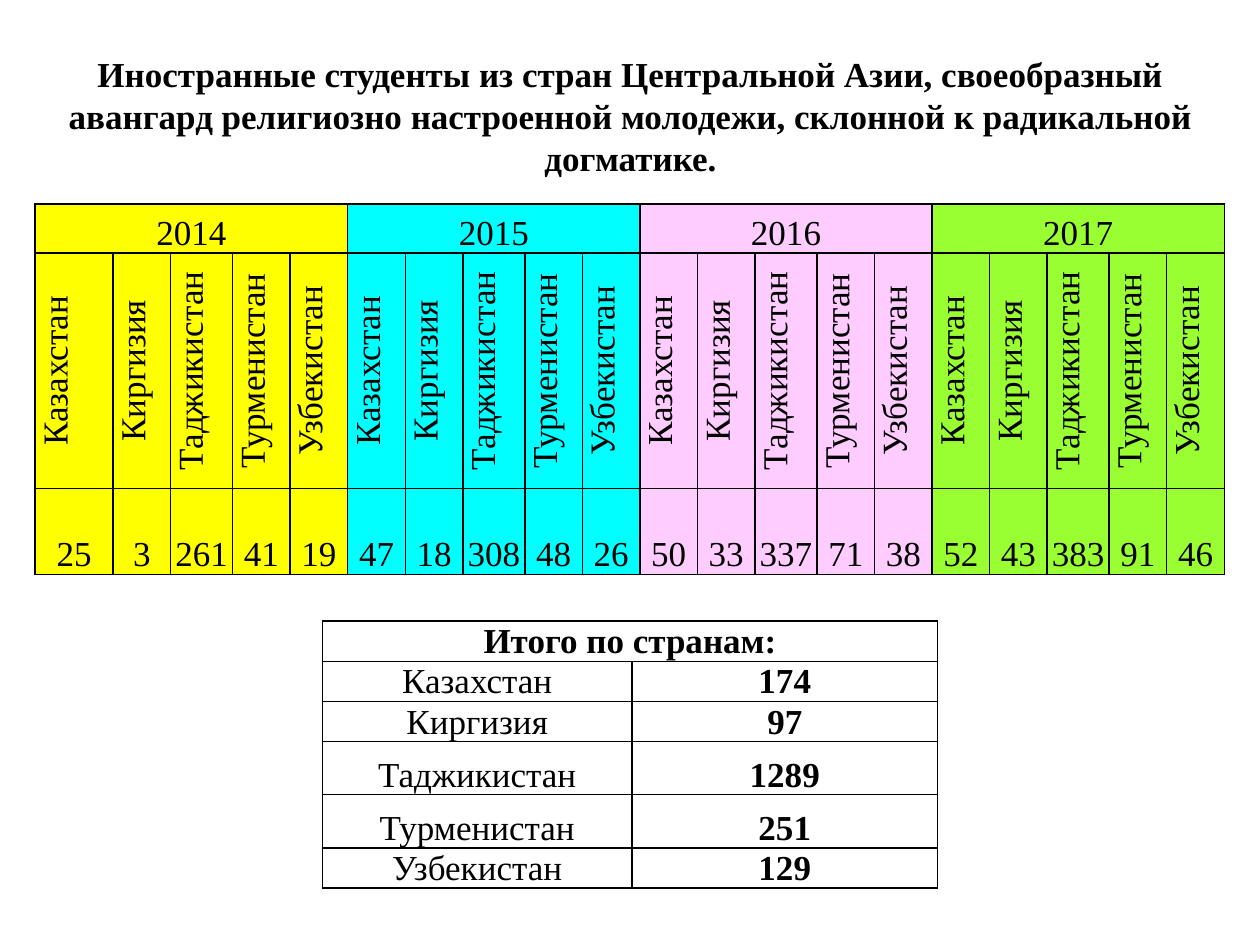
import dataclasses

import pptx
import pptx.dml.color
import pptx.enum.text
import pptx.oxml
import pptx.oxml.ns
import pptx.table
import pptx.util
from pptx.util import Cm

ANCHOR = pptx.enum.text.MSO_ANCHOR
COUNTRIES = ["Казахстан", "Киргизия", "Таджикистан", "Турменистан", "Узбекистан"]
TITLE = (
    "Иностранные студенты из стран Центральной Азии, своеобразный авангард "
    "религиозно настроенной молодежи, склонной к радикальной догматике."
)
BLACK = "000000"
FONT_FORMAT = {"name": "Times New Roman", "size": pptx.util.Pt(20)}
CELL_MARGINS = {
    "margin_left": Cm(0.02),
    "margin_right": Cm(0.02),
    "margin_top": Cm(0.02),
    "margin_bottom": 0,
}


@dataclasses.dataclass
class Year:
    label: str
    fill: str
    students: list[int]


YEARS = [
    Year("2014", "FFFF00", [25, 3, 261, 41, 19]),
    Year("2015", "00FFFF", [47, 18, 308, 48, 26]),
    Year("2016", "FFCCFF", [50, 33, 337, 71, 38]),
    Year("2017", "99FF33", [52, 43, 383, 91, 46]),
]


def color(code: str) -> pptx.dml.color.RGBColor:
    return pptx.dml.color.RGBColor.from_string(code)


def apply_format(target, values: dict) -> None:
    for name, value in values.items():
        setattr(target, name, value)


def write(frame, text: str, bold: bool = False) -> None:
    """Put one centred line of black text into a text frame."""
    para = frame.paragraphs[0]
    para.alignment = pptx.enum.text.PP_ALIGN.CENTER
    span = para.add_run()
    span.text = text
    apply_format(span.font, FONT_FORMAT | {"bold": bold})
    span.font.color.rgb = color(BLACK)


def add_borders(cell: pptx.table._Cell) -> None:
    properties = cell._tc.get_or_add_tcPr()
    namespace = pptx.oxml.ns.nsdecls("a")
    for position, side in enumerate(("lnL", "lnR", "lnT", "lnB")):
        border = pptx.oxml.parse_xml(
            f'<a:{side} {namespace} w="12700"><a:solidFill>'
            f'<a:srgbClr val="{BLACK}"/></a:solidFill></a:{side}>'
        )
        properties.insert(position, border)


def add_plain_table(
    page, left: int, top: int, widths: list[int], heights: list[int]
) -> pptx.table.Table:
    """Add an unfilled table with black borders and bottom-anchored cells."""
    table = page.shapes.add_table(
        len(heights), len(widths), left, top, sum(widths), sum(heights)
    ).table
    apply_format(table, {"first_row": False, "horz_banding": False})
    for column, width in zip(table.columns, widths):
        column.width = width
    for row, height in zip(table.rows, heights):
        row.height = height
    for cell in table.iter_cells():
        apply_format(cell, CELL_MARGINS | {"vertical_anchor": ANCHOR.BOTTOM})
        add_borders(cell)
        cell.fill.background()
    return table


def add_title(page) -> None:
    box = page.shapes.add_textbox(Cm(0.71), Cm(0.94), Cm(24), Cm(2.82))
    box.text_frame.word_wrap = True
    write(box.text_frame, TITLE, bold=True)


def add_year_table(page) -> None:
    widths = [Cm(1.16), Cm(1.16), Cm(1.25), Cm(1.16), Cm(1.16)] * len(YEARS)
    widths[0] = Cm(1.57)
    heights = [Cm(0.99), Cm(4.75), Cm(1.73)]
    table = add_plain_table(page, Cm(0.71), Cm(4.11), widths, heights)
    for index, year in enumerate(YEARS):
        first = index * len(COUNTRIES)
        last = first + len(COUNTRIES) - 1
        table.cell(0, first).merge(table.cell(0, last))
        write(table.cell(0, first).text_frame, year.label)
        for offset, (country, count) in enumerate(zip(COUNTRIES, year.students)):
            cells = [table.cell(row, first + offset) for row in range(len(heights))]
            for cell in cells:
                cell.fill.solid()
                cell.fill.fore_color.rgb = color(year.fill)
            cells[1]._tc.get_or_add_tcPr().set("vert", "vert270")
            write(cells[1].text_frame, country)
            write(cells[2].text_frame, str(count))


def add_totals_table(page) -> None:
    low, high = Cm(0.81), Cm(1.07)
    table = add_plain_table(
        page, Cm(6.5), Cm(12.52), [Cm(6.24), Cm(6.16)], [low, low, low, high, high, low]
    )
    heading = table.cell(0, 0)
    heading.merge(table.cell(0, 1))
    heading.vertical_anchor = ANCHOR.MIDDLE
    write(heading.text_frame, "Итого по странам:", bold=True)
    yearly_counts = zip(*(year.students for year in YEARS))
    for row, (country, counts) in enumerate(zip(COUNTRIES, yearly_counts), start=1):
        write(table.cell(row, 0).text_frame, country)
        write(table.cell(row, 1).text_frame, str(sum(counts)), bold=True)


def main() -> None:
    deck = pptx.Presentation()
    apply_format(deck, {"slide_width": Cm(25.4), "slide_height": Cm(19.05)})
    page = deck.slides.add_slide(deck.slide_layouts[6])
    add_year_table(page)
    add_totals_table(page)
    add_title(page)
    deck.save("out.pptx")


if __name__ == "__main__":
    main()
